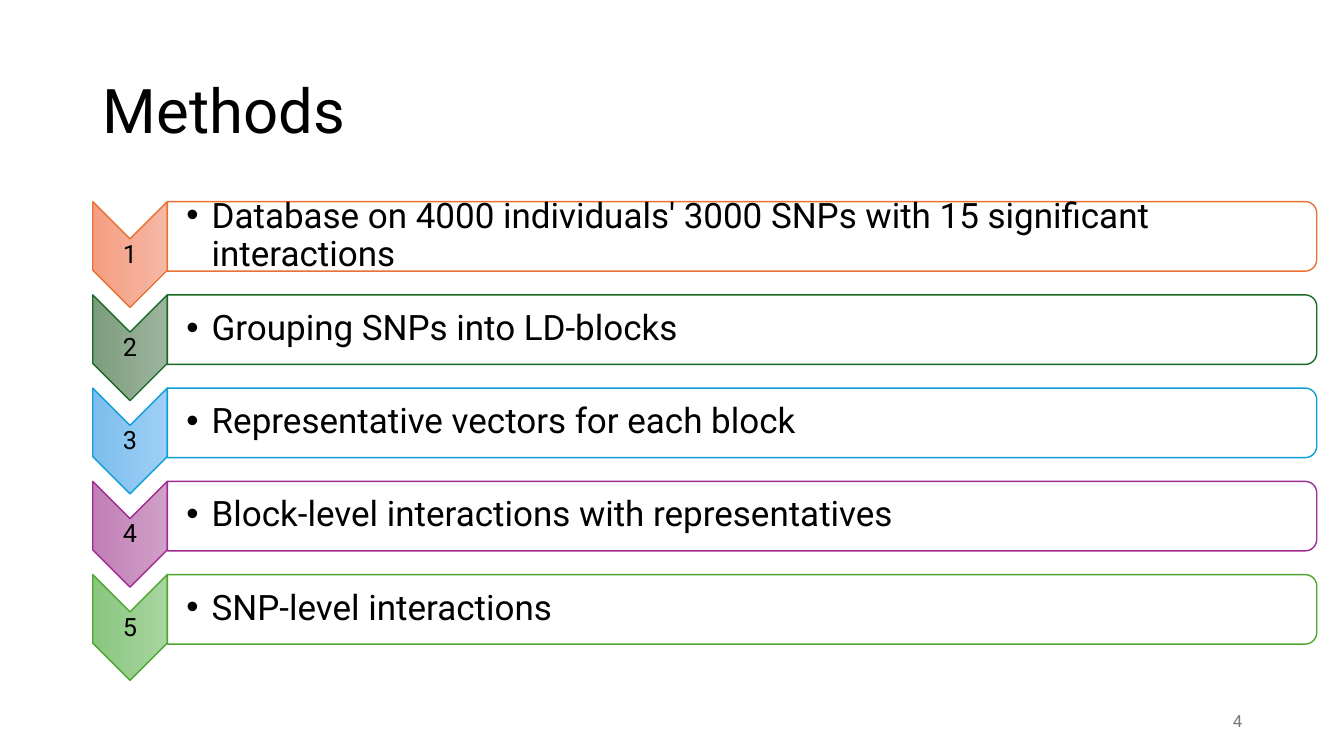
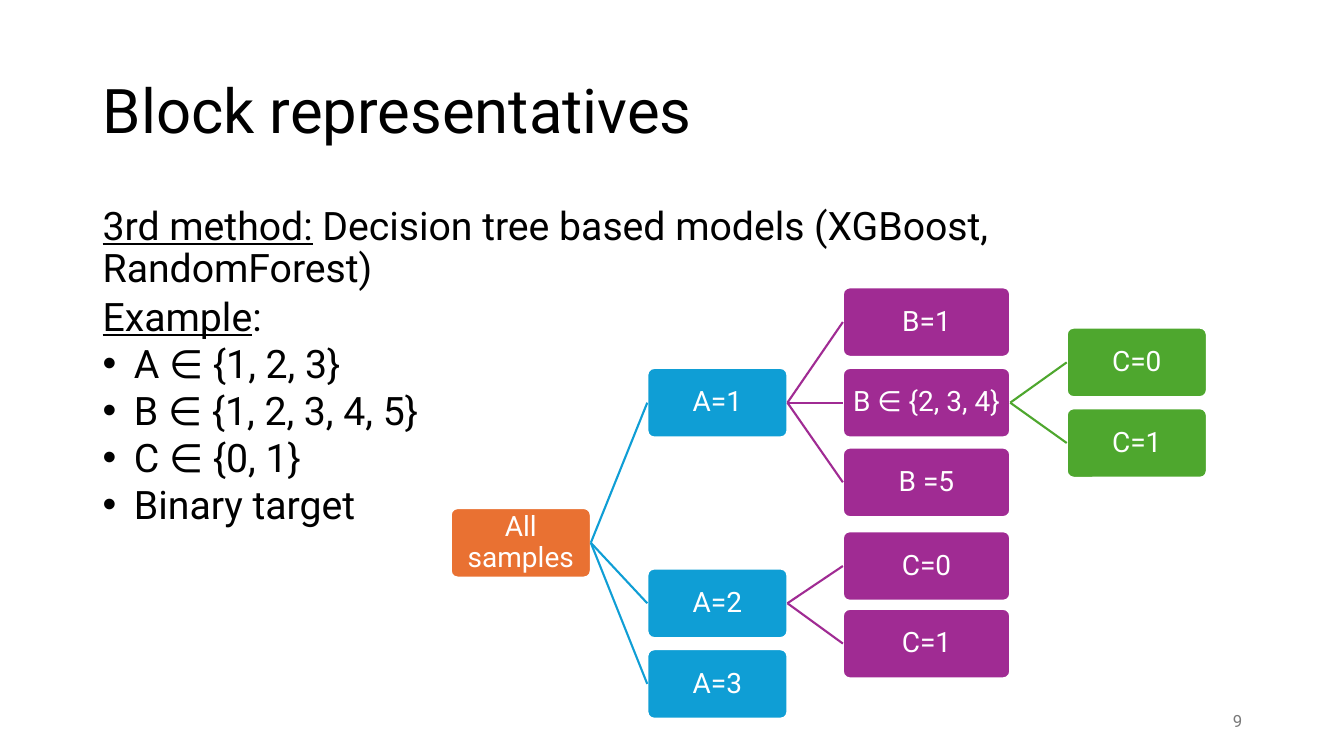
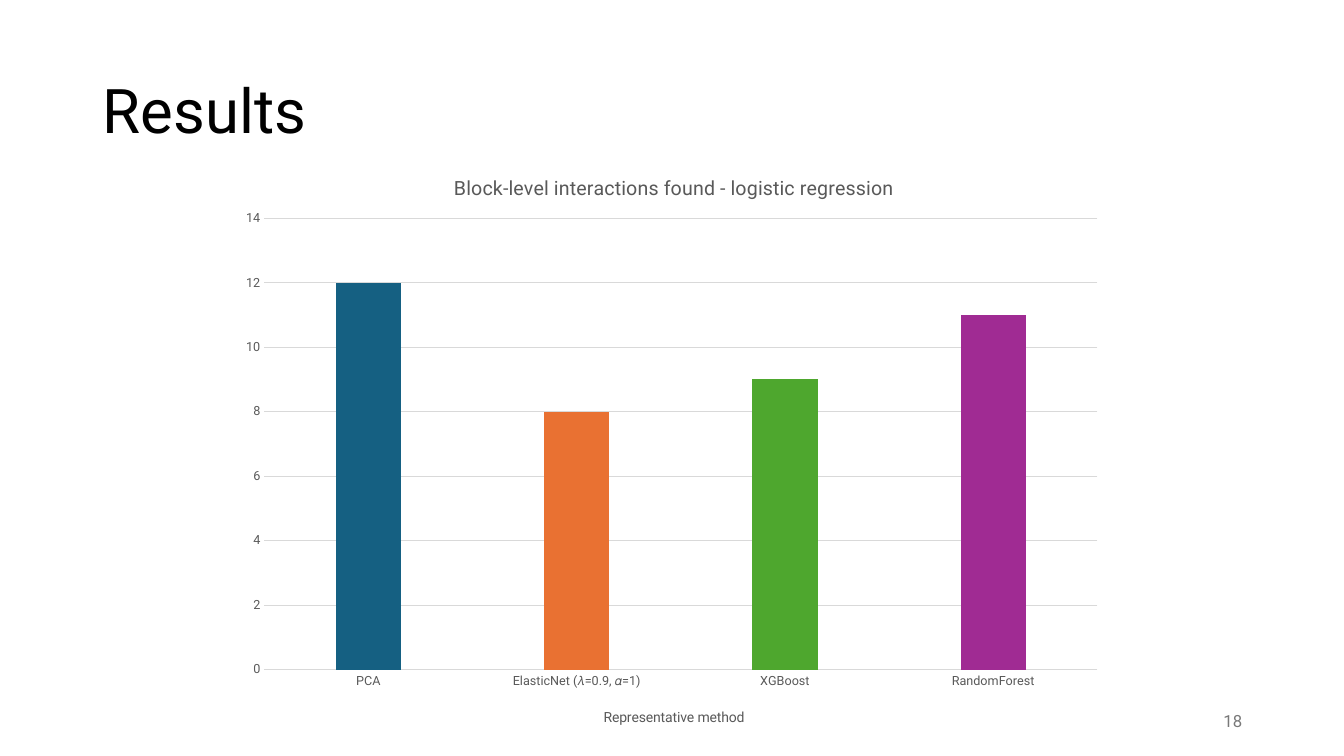
from dataclasses import dataclass

from lxml import etree
from pptx import Presentation
from pptx import util as u
from pptx.chart.data import CategoryChartData
from pptx.dml.color import RGBColor
from pptx.enum import chart as charts, shapes, text
from pptx.oxml.ns import qn

PX = 9144  # 100 px to the inch


@dataclass(frozen=True)
class Theme:
    font: str = "Roboto"
    ink: str = "000000"
    paper: str = "FFFFFF"
    muted: str = "797979"
    label: str = "595959"
    grid: str = "D9D9D9"
    navy: str = "156082"
    orange: str = "E97132"
    forest: str = "196B24"
    sky: str = "0F9ED5"
    purple: str = "A02B93"
    green: str = "4EA72E"
    title_size: int = 44
    body_size: int = 28
    step_size: int = 25
    node_size: int = 20
    number_size: int = 18
    page_size: int = 12
    chart_title_size: int = 14
    axis_title_size: int = 10
    tick_size: int = 9


T = Theme()

# line colour, gradient top, gradient bottom, text
STEPS = [
    (T.orange, "F5B8A5", "F59E82",
     "Database on 4000 individuals' 3000 SNPs with 15 significant interactions"),
    (T.forest, "9EB49F", "7D9C7E", "Grouping SNPs into LD-blocks"),
    (T.sky, "9ECFF5", "7CBEED", "Representative vectors for each block"),
    (T.purple, "D0A0C8", "C17FB6", "Block-level interactions with representatives"),
    (T.green, "A8D5A0", "8AC680", "SNP-level interactions"),
]
STEP_TOP, STEP_PITCH = 200, 92.5
CHEVRON_LEFT, CHEVRON_WIDTH, CHEVRON_HEIGHT = 92, 74, 105
CARD_LEFT, CARD_WIDTH, CARD_HEIGHT = 166, 1140, 69

METHOD = [[("3rd method:", True),
           (" Decision tree based models (XGBoost, RandomForest)", False)]]
EXAMPLE = [[("Example", True), (":", False)]]
EXAMPLE_ITEMS = ["A ∈ {1, 2, 3}", "B ∈ {1, 2, 3, 4, 5}", "C ∈ {0, 1}", "Binary target"]

# left, width, colour of each tree level
LEVELS = [(447, 139, T.orange), (642, 139, T.sky), (836, 166, T.purple), (1058, 139, T.green)]
NODE_HEIGHT = 69
# name, parent, level, top, text
NODES = [
    ("root", None, 0, 504, "All samples"),
    ("a1", "root", 1, 365, "A=1"),
    ("a1 b1", "a1", 2, 285, "B=1"),
    ("a1 b2-4", "a1", 2, 365, "B ∈ {2, 3, 4}"),
    ("a1 b2-4 c0", "a1 b2-4", 3, 325, "C=0"),
    ("a1 b2-4 c1", "a1 b2-4", 3, 405, "C=1"),
    ("a1 b5", "a1", 2, 444, "B =5"),
    ("a2", "root", 1, 564, "A=2"),
    ("a2 c0", "a2", 2, 527, "C=0"),
    ("a2 c1", "a2", 2, 604, "C=1"),
    ("a3", "root", 1, 644, "A=3"),
]

CHART_TITLE = "Block-level interactions found - logistic regression"
AXIS_TITLE = "Representative method"
RESULTS = [("PCA", 12, T.navy), ("ElasticNet (𝜆=0.9, 𝛼=1)", 8, T.orange),
           ("XGBoost", 9, T.green), ("RandomForest", 11, T.purple)]


def px(*lengths):
    return [u.Emu(round(length * PX)) for length in lengths]


def rgb(value):
    return RGBColor.from_string(value)


def style_font(font, size, color):
    font.name, font.size = T.font, u.Pt(size)
    font.color.rgb = rgb(color)


def add_bullet(para, indent):
    props = para._p.get_or_add_pPr()
    margin = px(indent)[0]
    props.set("marL", str(margin))
    props.set("indent", str(-margin))
    etree.SubElement(props, qn("a:buFont")).set("typeface", "Arial")
    etree.SubElement(props, qn("a:buChar")).set("char", "•")


def write(frame, paras, size, color=T.ink, align=text.PP_ALIGN.LEFT, spacing=None,
          anchor=text.MSO_ANCHOR.MIDDLE, insets=(10, 5, 10, 5), bullet=0, first_bullet=0):
    """Fill a frame; a paragraph is a string or a list of (text, underlined) spans."""
    frame.word_wrap = True
    frame.auto_size = text.MSO_AUTO_SIZE.NONE
    frame.vertical_anchor = anchor
    (frame.margin_left, frame.margin_top,
     frame.margin_right, frame.margin_bottom) = px(*insets)
    for index, content in enumerate(paras):
        para = frame.add_paragraph() if index else frame.paragraphs[0]
        if bullet and index >= first_bullet:
            add_bullet(para, bullet)
        para.alignment = align
        if spacing:
            para.line_spacing = spacing
        for words, underlined in [(content, False)] if isinstance(content, str) else content:
            span = para.add_run()
            span.text = words
            style_font(span.font, size, color)
            if underlined:
                span.font.underline = True


def add_text(page, box, paras, **style):
    write(page.shapes.add_textbox(*px(*box)).text_frame, paras, **style)


def add_box(page, kind, box, line, line_width, fill=None):
    shape = page.shapes.add_shape(kind, *px(*box))
    shape.shadow.inherit = False
    if fill:
        shape.fill.solid()
        shape.fill.fore_color.rgb = rgb(fill)
    shape.line.color.rgb = rgb(line)
    shape.line.width = u.Pt(line_width)
    return shape


def turned(left, top, width, height):
    """Frame that covers the given area once it is rotated by 90 degrees."""
    return (left + (width - height) / 2, top + (height - width) / 2, height, width)


def add_page(deck, title, number):
    page = deck.slides.add_slide(deck.slide_layouts[5])
    heading = page.shapes.title
    heading.left, heading.top, heading.width, heading.height = px(92, 40, 1150, 145)
    write(heading.text_frame, [title], size=T.title_size, spacing=0.9)
    add_text(page, (942, 695, 300, 40), [str(number)], size=T.page_size, color=T.muted,
             align=text.PP_ALIGN.RIGHT)
    return page


def add_step(page, index, color, light, dark, words):
    top = STEP_TOP + index * STEP_PITCH
    chevron = add_box(page, shapes.MSO_SHAPE.CHEVRON,
                      turned(CHEVRON_LEFT, top, CHEVRON_WIDTH, CHEVRON_HEIGHT), color, 1)
    chevron.rotation = 90
    chevron.fill.gradient()
    chevron.fill.gradient_angle = 270
    for stop, shade, position in zip(chevron.fill.gradient_stops, (light, dark), (0, 1)):
        stop.color.rgb = rgb(shade)
        stop.position = position
    add_text(page, (CHEVRON_LEFT, top + 37, CHEVRON_WIDTH, 32), [str(index + 1)],
             size=T.number_size, align=text.PP_ALIGN.CENTER, spacing=0.9, insets=(1, 1, 1, 1))
    card = add_box(page, shapes.MSO_SHAPE.ROUND_2_SAME_RECTANGLE,
                   turned(CARD_LEFT, top, CARD_WIDTH, CARD_HEIGHT), color, 1, T.paper)
    card.rotation = 90
    add_text(page, (CARD_LEFT, top + 3, CARD_WIDTH - 4, 62), [words], size=T.step_size,
             spacing=0.9, insets=(19, 2, 2, 2), bullet=25)


def add_branch(page, parent, child, color):
    branch = page.shapes.add_connector(shapes.MSO_CONNECTOR.STRAIGHT, 0, 0, 0, 0)
    branch.begin_connect(parent, 3)
    branch.end_connect(child, 1)
    branch.line.color.rgb = rgb(color)
    branch.line.width = u.Pt(1.5)
    etree.SubElement(branch._element.spPr, qn("a:effectLst"))


def add_tree(page):
    placed = {}
    for name, parent, level, top, words in NODES:
        left, width, color = LEVELS[level]
        node = add_box(page, shapes.MSO_SHAPE.ROUNDED_RECTANGLE,
                       (left, top, width, NODE_HEIGHT), T.paper, 1.5, color)
        node.adjustments[0] = 0.1
        write(node.text_frame, [words], size=T.node_size, color=T.paper,
              align=text.PP_ALIGN.CENTER, spacing=0.9, insets=(3, 3, 3, 3))
        placed[name] = node
        if parent:
            add_branch(page, placed[parent], node, color)


def place(parent, index, **fractions):
    """Give a chart part a manual layout, in fractions of the chart."""
    for old in parent.findall(qn("c:layout")):
        parent.remove(old)
    layout = etree.Element(qn("c:layout"))
    manual = etree.SubElement(layout, qn("c:manualLayout"))
    settings = {"xMode": "edge", "yMode": "edge", **fractions}
    if "w" in fractions:
        settings = {"layoutTarget": "inner", **settings}
    for key, value in settings.items():
        etree.SubElement(manual, qn(f"c:{key}")).set("val", str(value))
    parent.insert(index, layout)


def title_part(part, words, size, x, y):
    frame = part.text_frame
    frame.text = words
    font = frame.paragraphs[0].runs[0].font
    style_font(font, size, T.label)
    font.bold = False
    place(part._element, 1, x=x, y=y)


def add_results_chart(page):
    data = CategoryChartData()
    data.categories = [name for name, _, _ in RESULTS]
    data.add_series("Series 1", [value for _, value, _ in RESULTS])
    chart = page.shapes.add_chart(charts.XL_CHART_TYPE.COLUMN_CLUSTERED,
                                  *px(227, 146, 879, 589), data).chart
    style_font(chart.font, T.axis_title_size, T.ink)
    chart.has_legend = False
    chart.has_title = True
    title_part(chart.chart_title, CHART_TITLE, T.chart_title_size, 0.25, 0.04)

    methods, counts = chart.category_axis, chart.value_axis
    for axis in (methods, counts):
        axis.major_tick_mark = axis.minor_tick_mark = charts.XL_TICK_MARK.NONE
        style_font(axis.tick_labels.font, T.tick_size, T.label)
    methods.has_title = True
    title_part(methods.axis_title, AXIS_TITLE, T.axis_title_size, 0.42, 0.94)
    counts.minimum_scale, counts.maximum_scale, counts.major_unit = 0, 14, 2
    counts.format.line.fill.background()
    for line in (methods.format.line, counts.major_gridlines.format.line):
        line.color.rgb = rgb(T.grid)
        line.width = u.Pt(0.75)

    plot = chart.plots[0]
    plot.gap_width, plot.overlap, plot.vary_by_categories = 219, -27, False
    for index, (_, _, color) in enumerate(RESULTS):
        fill = plot.series[0].points[index].format.fill
        fill.solid()
        fill.fore_color.rgb = rgb(color)
    place(chart._chartSpace.chart.plotArea, 0, x=0.04, y=0.12, w=0.94, h=0.76)


def main():
    deck = Presentation()
    deck.slide_width, deck.slide_height = u.Inches(13.33), u.Inches(7.5)

    page = add_page(deck, "Methods", 4)
    for index, step in enumerate(STEPS):
        add_step(page, index, *step)

    page = add_page(deck, "Block representatives", 9)
    add_text(page, (92, 200, 1150, 85), METHOD, size=T.body_size, spacing=0.9,
             anchor=text.MSO_ANCHOR.TOP)
    add_tree(page)
    add_text(page, (92, 285, 348, 246), EXAMPLE + EXAMPLE_ITEMS, size=T.body_size,
             anchor=text.MSO_ANCHOR.TOP, bullet=31, first_bullet=1)

    page = add_page(deck, "Results", 18)
    add_results_chart(page)

    deck.save("out.pptx")


if __name__ == "__main__":
    main()
